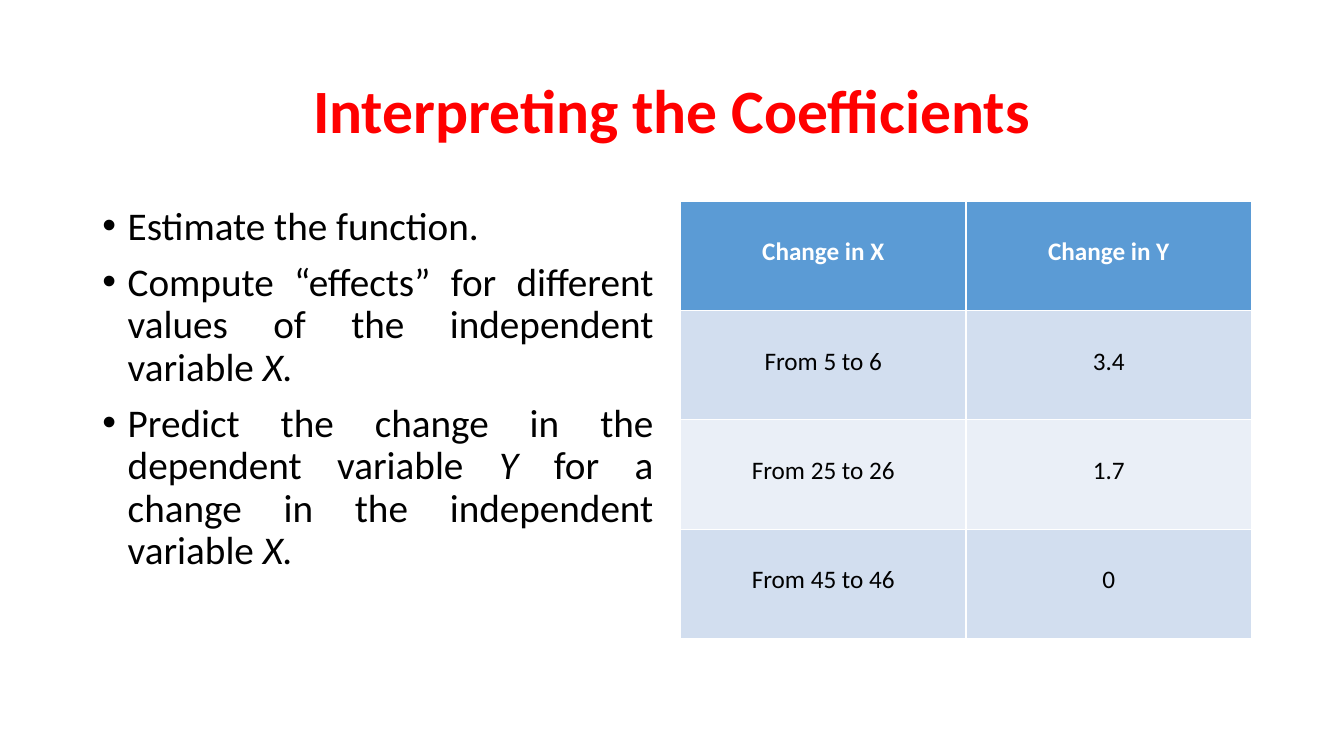
from lxml import etree
from pptx import Presentation
from pptx.dml.color import RGBColor
from pptx.enum.text import MSO_ANCHOR, PP_ALIGN
from pptx.oxml.ns import qn
from pptx.util import Cm, Pt

CENTER, JUSTIFY = PP_ALIGN.CENTER, PP_ALIGN.JUSTIFY
MIDDLE, TOP = MSO_ANCHOR.MIDDLE, MSO_ANCHOR.TOP

FONT = "Calibri"
RED, BLACK, WHITE = "FF0000", "000000", "FFFFFF"
HEADER_FILL = "5B9BD5"
BAND_FILLS = ("EAEFF7", "D2DEEF")

TITLE = "Interpreting the Coefficients"
# Each bullet alternates upright and italic pieces
BULLETS = [
    ["Estimate the function."],
    ["Compute “effects” for different values of the independent variable ", "X."],
    ["Predict the change in the dependent variable ", "Y ",
     "for a change in the independent variable ", "X."],
]
CHANGES = [
    ("Change in X", "Change in Y"),
    ("From 5 to 6", "3.4"),
    ("From 25 to 26", "1.7"),
    ("From 45 to 46", "0"),
]


def rgb(color):
    return RGBColor.from_string(color)


def style_run(r, size, color, bold=False, italic=False):
    r.font.name = FONT
    r.font.size = Pt(size)
    r.font.color.rgb = rgb(color)
    r.font.bold = bold
    r.font.italic = italic


def add_bullet(p, indent):
    pPr = p._p.get_or_add_pPr()
    pPr.set("marL", str(indent))
    pPr.set("indent", str(-indent))
    etree.SubElement(pPr, qn("a:buFont")).set("typeface", "Arial")
    etree.SubElement(pPr, qn("a:buChar")).set("char", "•")


def add_text_frame(s, box, anchor):
    tf = s.shapes.add_textbox(*box).text_frame
    tf.word_wrap = True
    tf.vertical_anchor = anchor
    return tf


def add_title(s, box):
    p = add_text_frame(s, box, MIDDLE).paragraphs[0]
    p.text = TITLE
    p.alignment = CENTER
    p.line_spacing = 0.9
    style_run(p.runs[0], 44, RED, bold=True)


def add_bullets(s, box):
    tf = add_text_frame(s, box, TOP)
    for i, pieces in enumerate(BULLETS):
        p = tf.add_paragraph() if i else tf.paragraphs[0]
        p.alignment = JUSTIFY
        p.line_spacing = 0.9
        p.space_before = Pt(10)
        add_bullet(p, Cm(0.64))
        for j, piece in enumerate(pieces):
            r = p.add_run()
            r.text = piece
            style_run(r, 28, BLACK, italic=j % 2 == 1)


def add_changes_table(s, box):
    table = s.shapes.add_table(len(CHANGES), len(CHANGES[0]), *box).table
    for i, row in enumerate(CHANGES):
        header = i == 0
        for j, text in enumerate(row):
            cell = table.cell(i, j)
            cell.fill.solid()
            cell.fill.fore_color.rgb = rgb(HEADER_FILL if header else BAND_FILLS[i % 2])
            cell.margin_top = Cm(0.9)
            p = cell.text_frame.paragraphs[0]
            p.text = text
            p.alignment = CENTER
            style_run(p.runs[0], 18, WHITE if header else BLACK, bold=header)


def main():
    prs = Presentation()
    prs.slide_width, prs.slide_height = Cm(33.87), Cm(19.05)
    s = prs.slides.add_slide(prs.slide_layouts[6])

    # Title across the top, bullets on the left, table on the right
    left, top, column = Cm(2.33), Cm(5.07), Cm(14.39)
    add_title(s, (left, Cm(1.01), Cm(29.21), Cm(3.68)))
    add_bullets(s, (left, top, column, Cm(12.09)))
    add_changes_table(s, (Cm(17.15), top, column, Cm(11.02)))

    prs.save("out.pptx")


if __name__ == "__main__":
    main()
